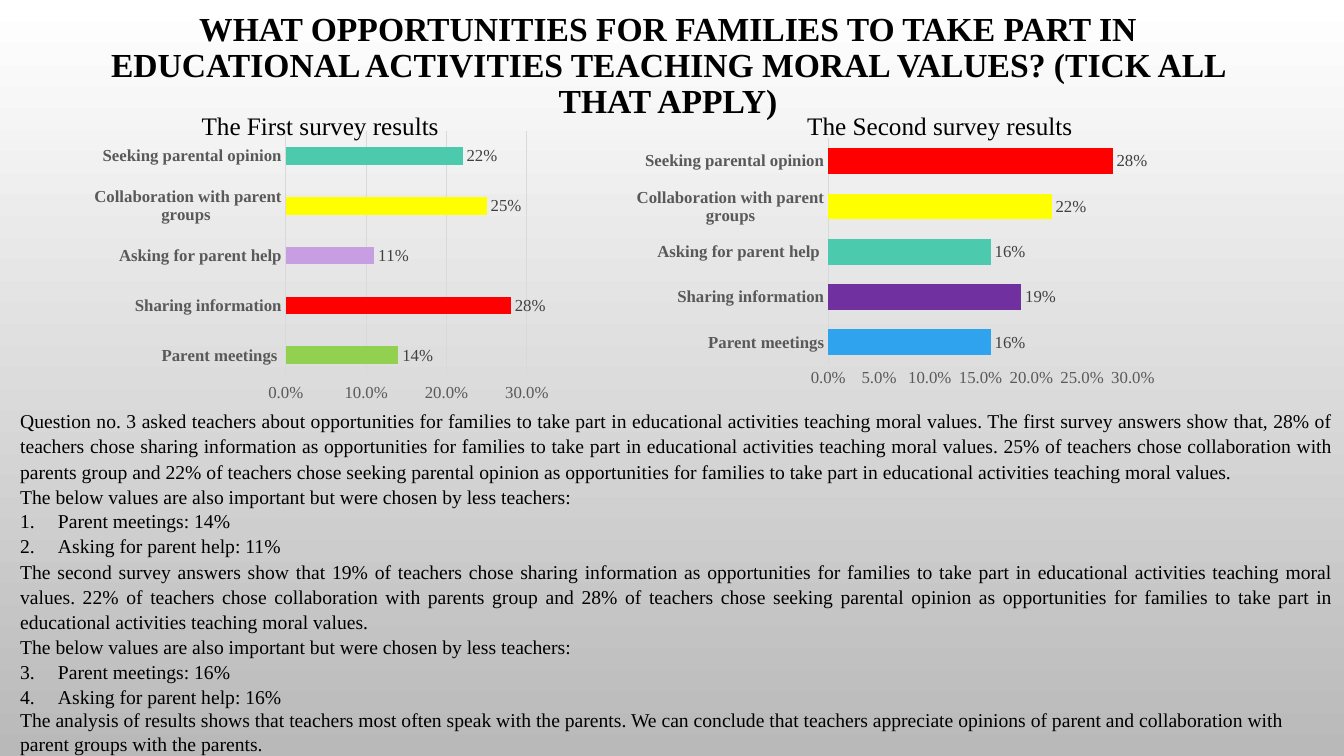
from lxml import etree
from pptx import Presentation
from pptx.chart.data import CategoryChartData
from pptx.dml.color import RGBColor
from pptx.enum import chart as charts, text
from pptx.oxml import ns
from pptx.util import Pt

FACE = "Times New Roman"
BELOW = "The below values are also important but were chosen by less teachers:"
FIRST_SURVEY = [
    ("Parent meetings ", 0.14, "92D050"),
    ("Sharing information", 0.28, "FF0000"),
    ("Asking for parent help", 0.11, "C89EE3"),
    ("Collaboration with parent groups ", 0.25, "FFFF00"),
    ("Seeking parental opinion", 0.22, "4BCAAD"),
]
SECOND_SURVEY = [
    ("Parent meetings", 0.16, "2FA3EE"),
    ("Sharing information", 0.19, "7030A0"),
    ("Asking for parent help ", 0.16, "4BCAAD"),
    ("Collaboration with parent groups", 0.22, "FFFF00"),
    ("Seeking parental opinion", 0.28, "FF0000"),
]
DISCUSSION = [
    ("Question no. 3 asked teachers about opportunities for families to take part in educational "
     "activities teaching moral values. The first survey answers show that, 28% of teachers chose "
     "sharing information as opportunities for families to take part in educational activities "
     "teaching moral values. 25% of teachers chose collaboration with parents group and 22% of "
     "teachers chose seeking parental opinion as opportunities for families to take part in "
     "educational activities teaching moral values.", 1.07, False),
    (BELOW, 1.06, False),
    ("Parent meetings: 14%", 1.06, True),
    ("Asking for parent help: 11%", 1.06, True),
    ("The second survey answers show that 19% of teachers chose sharing information as "
     "opportunities for families to take part in educational activities teaching moral values. "
     "22% of teachers chose collaboration with parents group and 28% of teachers chose seeking "
     "parental opinion as opportunities for families to take part in educational activities "
     "teaching moral values.", 1.07, False),
    (BELOW, 1.06, False),
    ("Parent meetings: 16%", 1.06, True),
    ("Asking for parent help: 16%", 1.06, True),
    ("The analysis of results shows that teachers most often speak with the parents. We can "
     "conclude that teachers appreciate opinions of parent and collaboration with parent groups "
     "with the parents.", None, False),
]


def colour(value):
    """Turn a hex string into a colour."""
    return RGBColor.from_string(value)


def set_font(font, size, value="000000", bold=False):
    """Set face, size, colour and weight of a font."""
    font.name, font.size, font.bold = FACE, Pt(size), bold
    font.color.rgb = colour(value)


def paint_background(page):
    """Fill the page with a vertical white to grey gradient."""
    fill = page.background.fill
    fill.gradient()
    fill.gradient_angle = 270
    for stop, value in zip(fill.gradient_stops, ("FFFFFF", "B9B9B9")):
        stop.color.rgb = colour(value)


def add_title(page, left, top, width, height):
    """Place the heading in the title placeholder."""
    title = page.shapes.title
    title.left, title.top, title.width, title.height = map(Pt, (left, top, width, height))
    frame = title.text_frame
    frame.text = ("WHAT OPPORTUNITIES FOR FAMILIES TO TAKE PART IN EDUCATIONAL ACTIVITIES "
                  "TEACHING MORAL VALUES? (TICK ALL THAT APPLY)")
    frame.auto_size = text.MSO_AUTO_SIZE.NONE
    frame.vertical_anchor = text.MSO_ANCHOR.MIDDLE
    para = frame.paragraphs[0]
    para.alignment, para.line_spacing = text.PP_ALIGN.CENTER, 0.9
    set_font(para.font, 24, bold=True)


def add_text_box(page, left, top, width, height):
    """Add a wrapping text box and return its frame."""
    frame = page.shapes.add_textbox(*map(Pt, (left, top, width, height))).text_frame
    frame.word_wrap = True
    frame.auto_size = text.MSO_AUTO_SIZE.SHAPE_TO_FIT_TEXT
    return frame


def add_caption(page, wording, left, top, width, height):
    """Add the caption of a chart."""
    para = add_text_box(page, left, top, width, height).paragraphs[0]
    para.text = wording
    set_font(para.font, 18)


def add_discussion(page, left, top, width, height):
    """Add the justified discussion with its numbered items."""
    frame = add_text_box(page, left, top, width, height)
    for index, (wording, spacing, numbered) in enumerate(DISCUSSION):
        para = frame.add_paragraph() if index else frame.paragraphs[0]
        para.text = wording
        if spacing:
            para.alignment, para.line_spacing = text.PP_ALIGN.JUSTIFY, spacing
        if numbered:
            properties = para._p.get_or_add_pPr()
            properties.set("marL", str(Pt(27)))
            properties.set("indent", str(-Pt(27)))
            etree.SubElement(properties, ns.qn("a:buAutoNum"), type="arabicPeriod")
        set_font(para.font, 14)


def place_plot(chart, plot_box):
    """Fix the inner plot area at fractions of the chart."""
    area = chart._chartSpace.chart.plotArea
    for old in area.findall(ns.qn("c:layout")):
        area.remove(old)
    layout = etree.Element(ns.qn("c:layout"))
    manual = etree.SubElement(layout, ns.qn("c:manualLayout"))
    settings = [("layoutTarget", "inner"), ("xMode", "edge"), ("yMode", "edge")]
    for name, value in settings + list(zip("xywh", plot_box)):
        etree.SubElement(manual, ns.qn(f"c:{name}"), val=str(value))
    area.insert(0, layout)


def add_survey_chart(page, answers, box, plot_box, gap, step, grid):
    """Add a bar chart of one survey with a colour for each answer."""
    data = CategoryChartData(number_format="0.0%")
    data.categories = [name for name, _, _ in answers]
    data.add_series("Series 1", [share for _, share, _ in answers])
    chart = page.shapes.add_chart(
        charts.XL_CHART_TYPE.BAR_CLUSTERED, *map(Pt, box), data).chart
    chart.has_title = chart.has_legend = False
    set_font(chart.font, 12)
    place_plot(chart, plot_box)

    names, shares = chart.category_axis, chart.value_axis
    for axis in (names, shares):
        axis.major_tick_mark = axis.minor_tick_mark = charts.XL_TICK_MARK.NONE
        set_font(axis.tick_labels.font, 12, "595959", bold=axis is names)
    shares.minimum_scale, shares.maximum_scale, shares.major_unit = 0, 0.3, step
    shares.tick_labels.number_format = "0.0%"
    shares.tick_labels.number_format_is_linked = False
    shares.format.line.fill.background()
    shares.has_major_gridlines = grid
    lines = [names.format.line] + ([shares.major_gridlines.format.line] if grid else [])
    for line in lines:
        line.color.rgb, line.width = colour("D9D9D9"), Pt(0.75)

    plot = chart.plots[0]
    plot.gap_width, plot.vary_by_categories = gap, False
    plot.has_data_labels = True
    labels = plot.data_labels
    labels.show_value = True
    labels.position = charts.XL_LABEL_POSITION.OUTSIDE_END
    labels.number_format, labels.number_format_is_linked = "0%", False
    set_font(labels.font, 12, "404040")
    for index, (_, _, value) in enumerate(answers):
        fill = plot.series[0].points[index].format.fill
        fill.solid()
        fill.fore_color.rgb = colour(value)


def build_survey_page(deck):
    """Build the page comparing both surveys."""
    page = deck.slides.add_slide(deck.slide_layouts[5])
    paint_background(page)
    add_title(page, 69.2, 5, 816, 85)
    add_survey_chart(page, FIRST_SURVEY, (42, 89.8, 356.5, 206.5),
                     (0.455, 0.018, 0.483, 0.863), 182, 0.1, True)
    add_discussion(page, 7.3, 287.6, 952.7, 275.8)
    add_survey_chart(page, SECOND_SURVEY, (454.8, 47.5, 384.5, 265),
                     (0.356, 0.194, 0.566, 0.611), 75, 0.05, False)
    add_caption(page, "The First survey results", 136.9, 75, 224.6, 29)
    add_caption(page, "The Second survey results", 569.5, 75, 224.6, 29)


def main():
    """Create the deck and save it."""
    deck = Presentation()
    deck.slide_width, deck.slide_height = Pt(960), Pt(540)
    build_survey_page(deck)
    deck.save("out.pptx")


if __name__ == "__main__":
    main()
